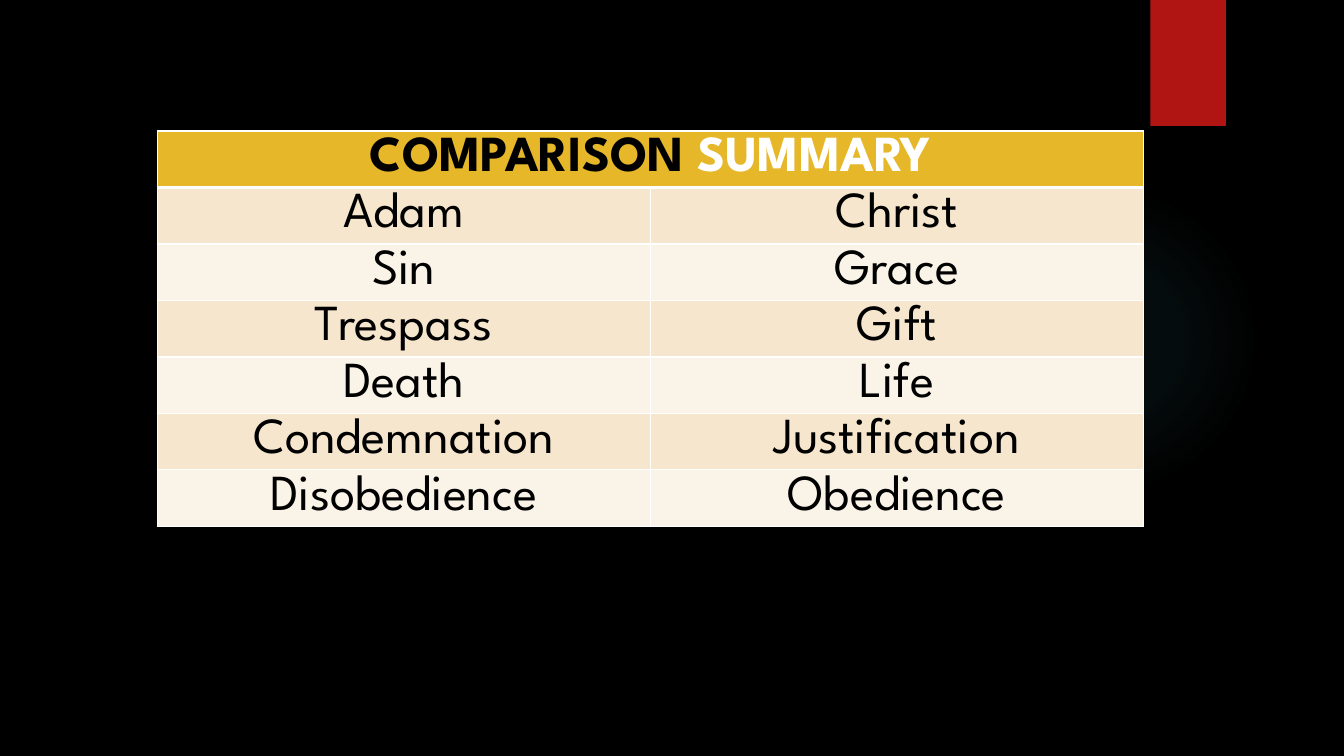
from pptx import Presentation
from pptx.dml.color import RGBColor
from pptx.enum.shapes import MSO_SHAPE
from pptx.enum.text import PP_ALIGN
from pptx.oxml import parse_xml
from pptx.oxml.ns import nsdecls
from pptx.util import Inches, Pt

OVAL, RECT = MSO_SHAPE.OVAL, MSO_SHAPE.RECTANGLE
CENTER = PP_ALIGN.CENTER
BLACK = RGBColor(0x00, 0x00, 0x00)
WHITE = RGBColor(0xFF, 0xFF, 0xFF)
RED = RGBColor(0xB0, 0x15, 0x13)
GOLD = RGBColor(0xE6, 0xB7, 0x29)
SAND = RGBColor(0xF5, 0xE6, 0xCD)
CREAM = RGBColor(0xFA, 0xF3, 0xE8)
TEAL = RGBColor(0x50, 0xB9, 0xC1)
FONT = "League Spartan"
COL, ROW = 4.89, 0.56
PAIRS = [
    ("Adam", "Christ"),
    ("Sin", "Grace"),
    ("Trespass", "Gift"),
    ("Death", "Life"),
    ("Condemnation", "Justification"),
    ("Disobedience", "Obedience"),
]


def add_shape(kind, *box):
    shape = slide.shapes.add_shape(kind, *map(Inches, box))
    shape.shadow.inherit = False
    shape.line.fill.background()
    return shape


def style_cell(cell, fill, base):
    props = cell._tc.get_or_add_tcPr()
    for side, width in (("L", 1), ("R", 1), ("T", 1), ("B", base)):
        props.append(parse_xml(
            f'<a:ln{side} {nsdecls("a")} w="{Pt(width)}"><a:solidFill>'
            f'<a:srgbClr val="{WHITE}"/></a:solidFill></a:ln{side}>'))
    cell.fill.solid()
    cell.fill.fore_color.rgb = fill
    para = cell.text_frame.paragraphs[0]
    para.alignment = CENTER
    for run in para.runs:
        run.font.name = FONT
        run.font.size = Pt(36)
        run.font.bold = fill == GOLD
        run.font.color.rgb = BLACK


prs = Presentation()
prs.slide_width, prs.slide_height = Inches(13.33), Inches(7.5)
slide = prs.slides.add_slide(prs.slide_layouts[6])
slide.background.fill.solid()
slide.background.fill.fore_color.rgb = BLACK

glow = add_shape(OVAL, 9.41, 1.83, 3.08, 3.08)
stops = "".join(
    f'<a:gs pos="{pos * 1000}"><a:srgbClr val="{TEAL}">'
    f'<a:alpha val="{alpha * 1000}"/></a:srgbClr></a:gs>'
    for pos, alpha in ((0, 7), (36, 6), (69, 0)))
glow._element.spPr.insert(2, parse_xml(
    f'<a:gradFill {nsdecls("a")}><a:gsLst>{stops}</a:gsLst><a:path path="circle">'
    '<a:fillToRect l="50000" t="50000" r="50000" b="50000"/></a:path></a:gradFill>'))

tab = add_shape(RECT, 11.41, 0, 0.75, 1.25)
tab.fill.solid()
tab.fill.fore_color.rgb = RED

count = len(PAIRS) + 1
table = slide.shapes.add_table(
    count, 2, Inches(1.56), Inches(1.3), Inches(2 * COL), Inches(count * ROW)).table

head = table.cell(0, 0)
head.merge(table.cell(0, 1))
para = head.text_frame.paragraphs[0]
for word in ("COMPARISON", " SUMMARY"):
    para.add_run().text = word
for col in range(2):
    style_cell(table.cell(0, col), GOLD, 3)
para.runs[1].font.color.rgb = WHITE

for row, pair in enumerate(PAIRS, 1):
    for col, word in enumerate(pair):
        cell = table.cell(row, col)
        cell.text_frame.text = word
        style_cell(cell, SAND if row % 2 else CREAM, 1)

prs.save("out.pptx")
